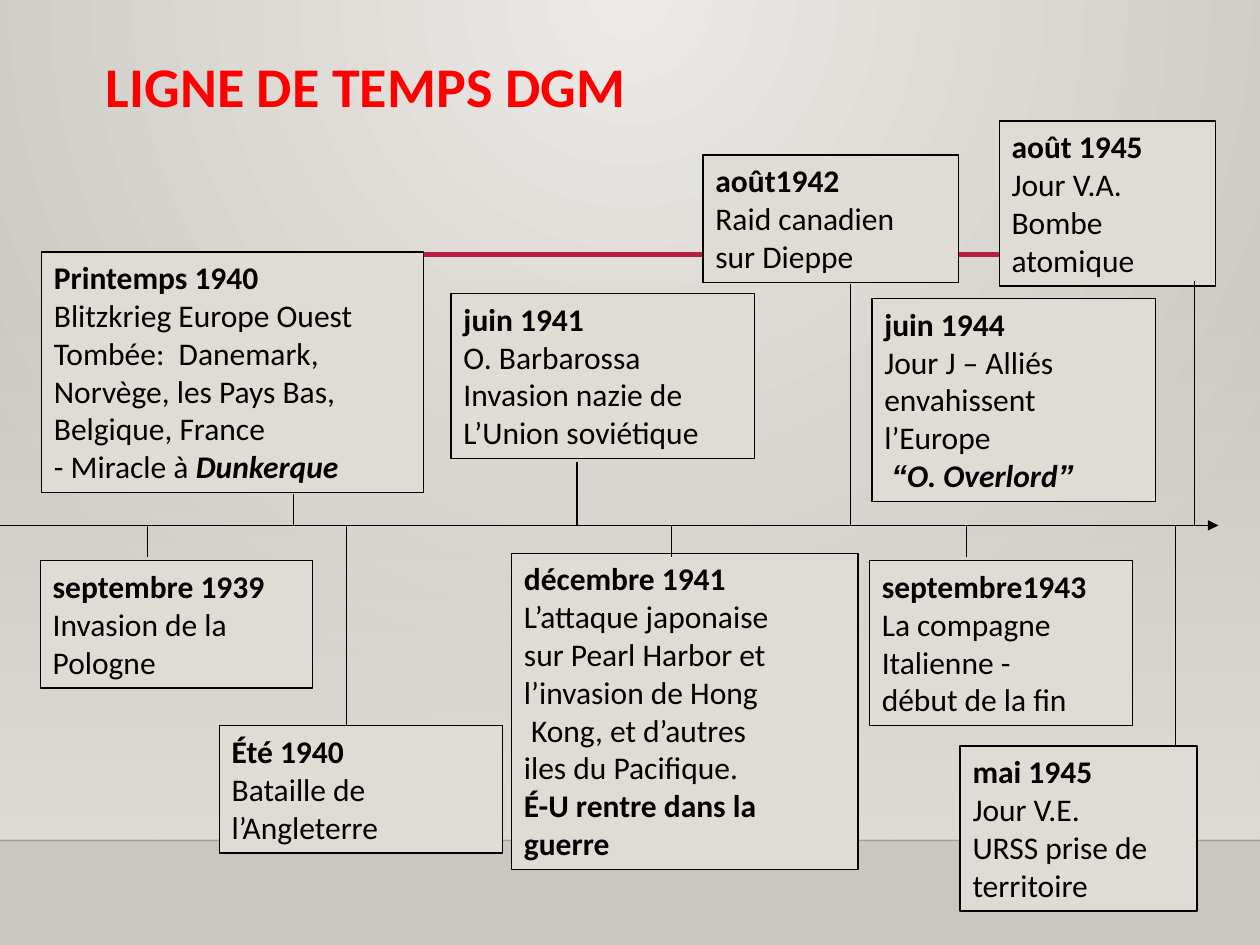
from lxml import etree
from pptx import Presentation
from pptx.dml.color import RGBColor
from pptx.enum.shapes import MSO_CONNECTOR, MSO_SHAPE
from pptx.enum.text import MSO_ANCHOR, MSO_AUTO_SIZE, PP_ALIGN
from pptx.oxml import parse_xml
from pptx.oxml.ns import qn
from pptx.util import Inches, Pt

STRAIGHT = MSO_CONNECTOR.STRAIGHT
RECTANGLE = MSO_SHAPE.RECTANGLE
LEFT = PP_ALIGN.LEFT
TOP = MSO_ANCHOR.TOP
FIT = MSO_AUTO_SIZE.SHAPE_TO_FIT_TEXT

COLORS = {
    "title": "FF0000", "ink": "000000", "card": "DFDBD5", "accent": "B71E42",
    "floor": "000001", "glow": "ECEAE7", "edge": "CAC7C1",
}
FONT, QUOTE_FONT = "Calibri", "Arial"
WIDTH, HEIGHT = 10, 7.5
AXIS_Y, AXIS_END = 4.17, 9.67
FLOOR_Y = 6.67
LINE_HEIGHT, CARD_PADDING = 0.3, 0.11

TITLE = "LIGNE DE TEMPS DGM"
BOLD = {"bold": True}
BOLD_ITALIC = {"bold": True, "italic": True}
QUOTE = {"bold": True, "italic": True, "font": QUOTE_FONT}

# date, (left, top, width), rows shown, text lines; a line is a string or a list of (text, format)
EVENTS = [
    ("septembre 1939", (0.32, 4.45, 2.16), 3, ["Invasion de la", "Pologne"]),
    ("Printemps 1940", (0.33, 2, 3.03), 6, [
        "Blitzkrieg Europe Ouest", "Tombée:  Danemark,", "Norvège, les Pays Bas,",
        "Belgique, France", [("- Miracle à ", {}), ("Dunkerque", BOLD_ITALIC)]]),
    ("Été 1940", (1.74, 5.76, 2.25), 3, ["Bataille de l’Angleterre"]),
    ("juin 1941", (3.58, 2.33, 2.41), 4, [
        "O. Barbarossa", "Invasion nazie de", "L’Union soviétique"]),
    ("décembre 1941", (4.06, 4.39, 2.75), 8, [
        "L’attaque japonaise", "sur Pearl Harbor et", "l’invasion de Hong",
        " Kong, et d’autres", "iles du Pacifique.",
        [("É-U rentre dans la", BOLD)], [("guerre", BOLD)]]),
    ("août1942", (5.58, 1.23, 2.03), 3, ["Raid canadien", "sur Dieppe"]),
    ("septembre1943", (6.9, 4.45, 2.09), 4, [
        "La compagne", "Italienne -", "début de la fin"]),
    ("juin 1944", (6.92, 2.37, 2.25), 5, [
        "Jour J – Alliés envahissent l’Europe",
        [(" ", BOLD_ITALIC), ("“", QUOTE), ("O. Overlord", BOLD_ITALIC), ("”", QUOTE)]]),
    ("mai 1945", (7.62, 5.92, 1.88), 4, ["Jour V.E.", "URSS prise de", "territoire"]),
    ("août 1945", (7.93, 0.96, 1.72), 4, ["Jour V.A.", "Bombe atomique"]),
]

# x on the axis, y of the far end
STEMS = [(1.17, 4.42), (2.33, 3.92), (2.75, 5.75), (4.58, 3.67), (5.33, 4.42),
         (6.75, 2.25), (7.67, 4.42), (9.33, 5.92), (9.48, 2.23)]


def rgb(name):
    return RGBColor.from_string(COLORS[name])


def gradient(stops, direction):
    """Make a gradFill from (position %, colour name, opacity %) stops."""
    stop_xml = "".join(
        f'<a:gs pos="{position * 1000}"><a:srgbClr val="{COLORS[name]}">'
        f'<a:alpha val="{opacity * 1000}"/></a:srgbClr></a:gs>'
        for position, name, opacity in stops)
    return parse_xml(
        '<a:gradFill xmlns:a="http://schemas.openxmlformats.org/drawingml/2006/main" '
        f'rotWithShape="1"><a:gsLst>{stop_xml}</a:gsLst>{direction}</a:gradFill>')


def replace_solid_fill(parent, fill):
    parent.replace(parent.find(qn("a:solidFill")), fill)


def add_line(page, start, end, color="ink", width=0.75):
    line = page.shapes.add_connector(STRAIGHT, *map(Inches, start + end))
    line.line.color.rgb = rgb(color)
    line.line.width = Pt(width)
    etree.SubElement(line.element.spPr, qn("a:effectLst"))
    return line


def add_box(page, left, top, width, height):
    box = page.shapes.add_shape(RECTANGLE, *map(Inches, (left, top, width, height)))
    box.shadow.inherit = False
    box.fill.solid()
    box.fill.fore_color.rgb = rgb("card")
    return box


def add_span(para, text, size=18, color="ink", font=FONT, bold=False, italic=False):
    span = para.add_run()
    span.text = text
    span.font.name = font
    span.font.size = Pt(size)
    span.font.color.rgb = rgb(color)
    span.font.bold = bold
    span.font.italic = italic


def add_event(page, date, place, rows, lines):
    box = add_box(page, *place, rows * LINE_HEIGHT + CARD_PADDING)
    box.line.color.rgb = rgb("ink")
    box.line.width = Pt(0.75)
    frame = box.text_frame
    frame.word_wrap = True
    frame.auto_size = FIT
    frame.vertical_anchor = TOP
    for index, line in enumerate([[(date, BOLD)]] + lines):
        para = frame.add_paragraph() if index else frame.paragraphs[0]
        para.alignment = LEFT
        for text, style in [(line, {})] if isinstance(line, str) else line:
            add_span(para, text, **style)


def add_backdrop(page):
    page.background.fill.solid()
    background = page.element.cSld.find(qn("p:bg")).find(qn("p:bgPr"))
    replace_solid_fill(background, gradient(
        [(0, "glow", 100), (100, "edge", 100)],
        '<a:path path="circle"><a:fillToRect l="43000" r="43000" b="100000"/></a:path>'))
    wall = add_box(page, 0, 2.2, WIDTH, 4.46)
    wall.line.fill.background()
    replace_solid_fill(wall.element.spPr, gradient(
        [(0, "card", 0), (100, "card", 100)], '<a:lin ang="5400000" scaled="0"/>'))
    floor = add_line(page, (0, FLOOR_Y), (WIDTH, FLOOR_Y), "floor", 1)
    for color in floor.element.spPr.iter(qn("a:srgbClr")):
        etree.SubElement(color, qn("a:alpha"), val="20000")
    add_line(page, (1.58, 2.02), (8.77, 2.02), "accent", 2.5)


def add_title(page):
    title = page.shapes.title
    title.left, title.top, title.width, title.height = map(Inches, (0.74, 0.42, 7.68, 1.25))
    title.text_frame.vertical_anchor = TOP
    para = title.text_frame.paragraphs[0]
    para.alignment = LEFT
    para.line_spacing = 0.9
    add_span(para, TITLE, size=32, color="title", bold=True)


def main():
    deck = Presentation()
    deck.slide_width, deck.slide_height = Inches(WIDTH), Inches(HEIGHT)
    page = deck.slides.add_slide(deck.slide_layouts[5])
    add_backdrop(page)
    add_title(page)
    axis = add_line(page, (0, AXIS_Y), (AXIS_END, AXIS_Y))
    etree.SubElement(axis.line._get_or_add_ln(), qn("a:tailEnd"), type="triangle")
    for event in EVENTS:
        add_event(page, *event)
    for x, far_y in STEMS:
        add_line(page, (x, far_y), (x, AXIS_Y))
    deck.save("out.pptx")


if __name__ == "__main__":
    main()
